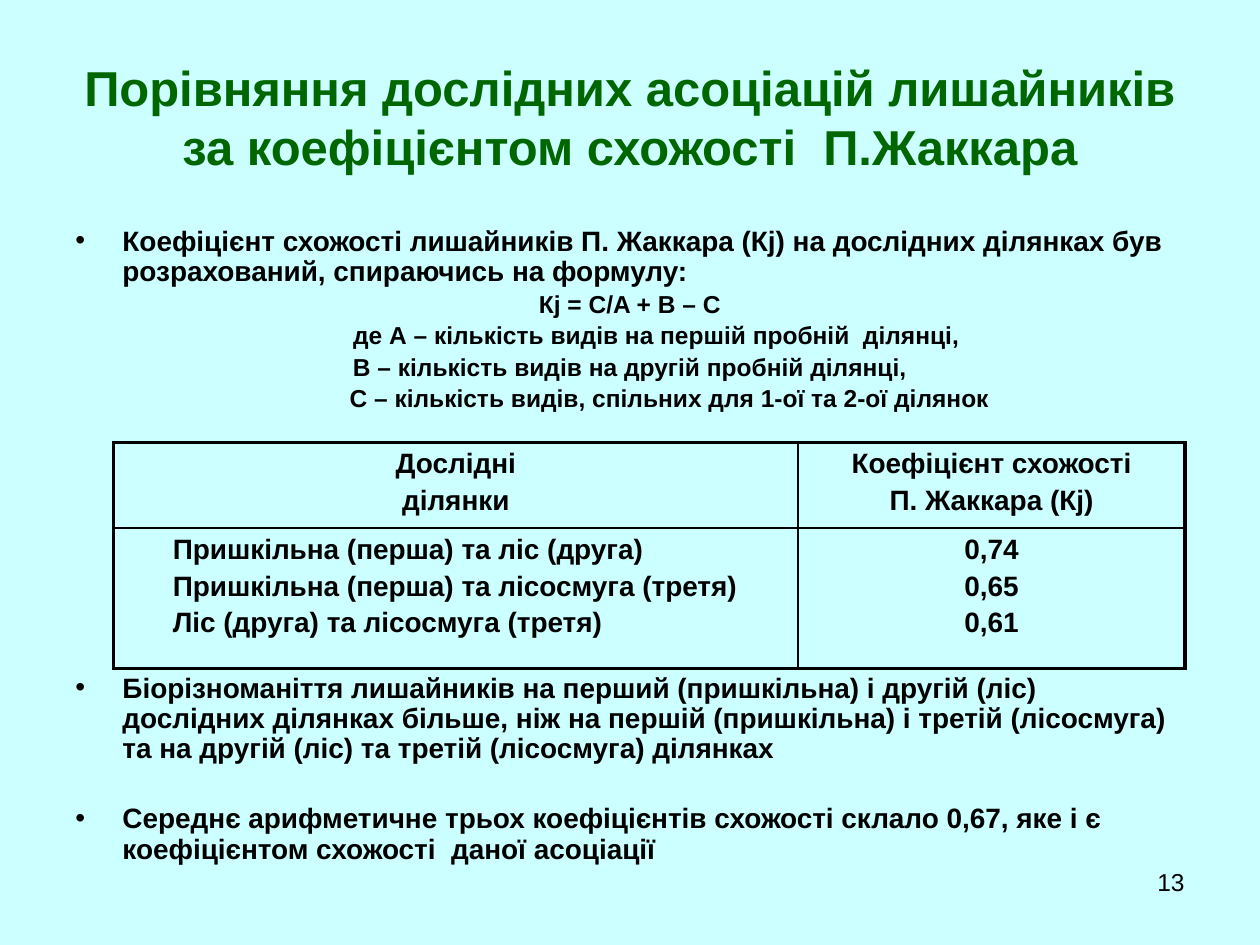
from lxml import etree
from pptx import Presentation, util as u
from pptx.dml.color import RGBColor
from pptx.enum import text
from pptx.oxml import ns

Cm, Pt = u.Cm, u.Pt
LEFT, CENTER, RIGHT = text.PP_ALIGN.LEFT, text.PP_ALIGN.CENTER, text.PP_ALIGN.RIGHT

TITLE = "Порівняння дослідних асоціацій лишайників за коефіцієнтом схожості  П.Жаккара"
INTRO = (
    "Коефіцієнт схожості лишайників П. Жаккара (Кj) на дослідних ділянках "
    "був розрахований, спираючись на формулу:"
)
FORMULA = [
    ("Кj = C/A + B – C", 0),
    ("де А – кількість видів на першій пробній  ділянці,", 1.07),
    ("В – кількість видів на другій пробній ділянці,", 0),
    ("С – кількість видів, спільних для 1-ої та 2-ої ділянок", 1.6),
]
HEADERS = [["Дослідні", "ділянки"], ["Коефіцієнт схожості", "П. Жаккара (Кj)"]]
PAIRS = [
    ("Пришкільна (перша) та ліс (друга)", "0,74"),
    ("Пришкільна (перша) та лісосмуга (третя)", "0,65"),
    ("Ліс (друга) та лісосмуга (третя)", "0,61"),
]
CONCLUSIONS = [
    "Біорізноманіття лишайників на перший (пришкільна) і другій (ліс) дослідних "
    "ділянках більше, ніж на першій (пришкільна) і третій (лісосмуга) та на другій "
    "(ліс) та третій (лісосмуга) ділянках",
    "Середнє арифметичне трьох коефіцієнтів схожості склало 0,67, яке і є "
    "коефіцієнтом схожості  даної асоціації",
]
PAGE = "13"

THEME = {
    "font": "Arial", "bg": "CCFFFF", "title": "006600", "ink": "000000",
    "title_size": 28, "body_size": 16, "small_size": 14,
    "outer": 2.25, "inner": 1, "line": 0.9, "before": 0.2, "gap": 23,
}
HANG = 0.95
COLS, ROWS = (13.8, 7.8), (1.63, 2.84)


def add_box(slide, left, top, width, height, anchor=text.MSO_ANCHOR.TOP):
    tf = slide.shapes.add_textbox(Cm(left), Cm(top), Cm(width), Cm(height)).text_frame
    tf.word_wrap = True
    tf.vertical_anchor = anchor
    return tf


def style(p, size, align=LEFT, color=THEME["ink"], bold=True, before=0, line=1, indent=0):
    p.alignment, p.line_spacing, p.space_before = align, line, Pt(before)
    if indent:
        p._p.get_or_add_pPr().set("marL", str(Cm(indent)))
    for r in p.runs:
        r.font.name, r.font.size, r.font.bold = THEME["font"], Pt(size), bold
        r.font.color.rgb = RGBColor.from_string(color)


def add_bullet(p):
    pPr = p._p.get_or_add_pPr()
    pPr.set("indent", str(-Cm(HANG)))
    etree.SubElement(pPr, ns.qn("a:buFont"), typeface=THEME["font"])
    etree.SubElement(pPr, ns.qn("a:buChar"), char="•")


def fill_body(tf, items):
    tf.text = "\n".join(item[0] for item in items)
    for p, (_, size, align, indent, bullet, before) in zip(tf.paragraphs, items):
        style(p, size, align, before=before, line=THEME["line"], indent=indent)
        if bullet:
            add_bullet(p)


def set_borders(cell, row, col):
    tcPr = cell._tc.get_or_add_tcPr()
    outer = {"L": col == 0, "R": col == len(COLS) - 1, "T": row == 0, "B": row == len(ROWS) - 1}
    for i, (side, is_outer) in enumerate(outer.items()):
        width = Pt(THEME["outer" if is_outer else "inner"])
        ln = etree.Element(ns.qn(f"a:ln{side}"), w=str(width))
        solid = etree.SubElement(ln, ns.qn("a:solidFill"))
        etree.SubElement(solid, ns.qn("a:srgbClr"), val=THEME["ink"])
        tcPr.insert(i, ln)


def add_pairs_table(slide):
    names, values = zip(*PAIRS)
    content = [HEADERS, [names, values]]
    tbl = slide.shapes.add_table(
        len(ROWS), len(COLS), Cm(2.29), Cm(8.92), Cm(sum(COLS)), Cm(sum(ROWS))
    ).table
    tbl.first_row = tbl.horz_banding = False
    for column, width in zip(tbl.columns, COLS):
        column.width = Cm(width)
    size = THEME["body_size"]
    for i, cells in enumerate(content):
        tbl.rows[i].height = Cm(ROWS[i])
        for j, lines in enumerate(cells):
            cell = tbl.cell(i, j)
            cell.text = "\n".join(lines)
            is_name = (i, j) == (1, 0)
            for p in cell.text_frame.paragraphs:
                style(p, size, LEFT if is_name else CENTER,
                      before=size * THEME["before"], indent=0.94 if is_name else 0)
            cell.fill.background()
            set_borders(cell, i, j)


def main():
    prs = Presentation()
    prs.slide_width, prs.slide_height = Cm(25.4), Cm(19.05)
    s = prs.slides.add_slide(prs.slide_layouts[6])
    s.background.fill.solid()
    s.background.fill.fore_color.rgb = RGBColor.from_string(THEME["bg"])

    body, small = THEME["body_size"], THEME["small_size"]
    before = THEME["before"]

    tf = add_box(s, 1.27, 0.76, 22.86, 3.18, text.MSO_ANCHOR.MIDDLE)
    tf.text = TITLE
    style(tf.paragraphs[0], THEME["title_size"], CENTER, THEME["title"])

    intro = [(INTRO, body, LEFT, HANG, True, body * before)]
    intro += [(t, small, CENTER, indent, False, small * before) for t, indent in FORMULA]
    fill_body(add_box(s, 1.27, 4.45, 22.86, 4.2), intro)

    add_pairs_table(s)

    gaps = (body * before, THEME["gap"])
    conclusions = [(t, body, LEFT, HANG, True, gap) for t, gap in zip(CONCLUSIONS, gaps)]
    fill_body(add_box(s, 1.27, 13.46, 22.86, 4.2), conclusions)

    tf = add_box(s, 18.2, 17.35, 5.93, 1.32)
    tf.text = PAGE
    style(tf.paragraphs[0], small, RIGHT, bold=False)

    prs.save("out.pptx")


if __name__ == "__main__":
    main()
